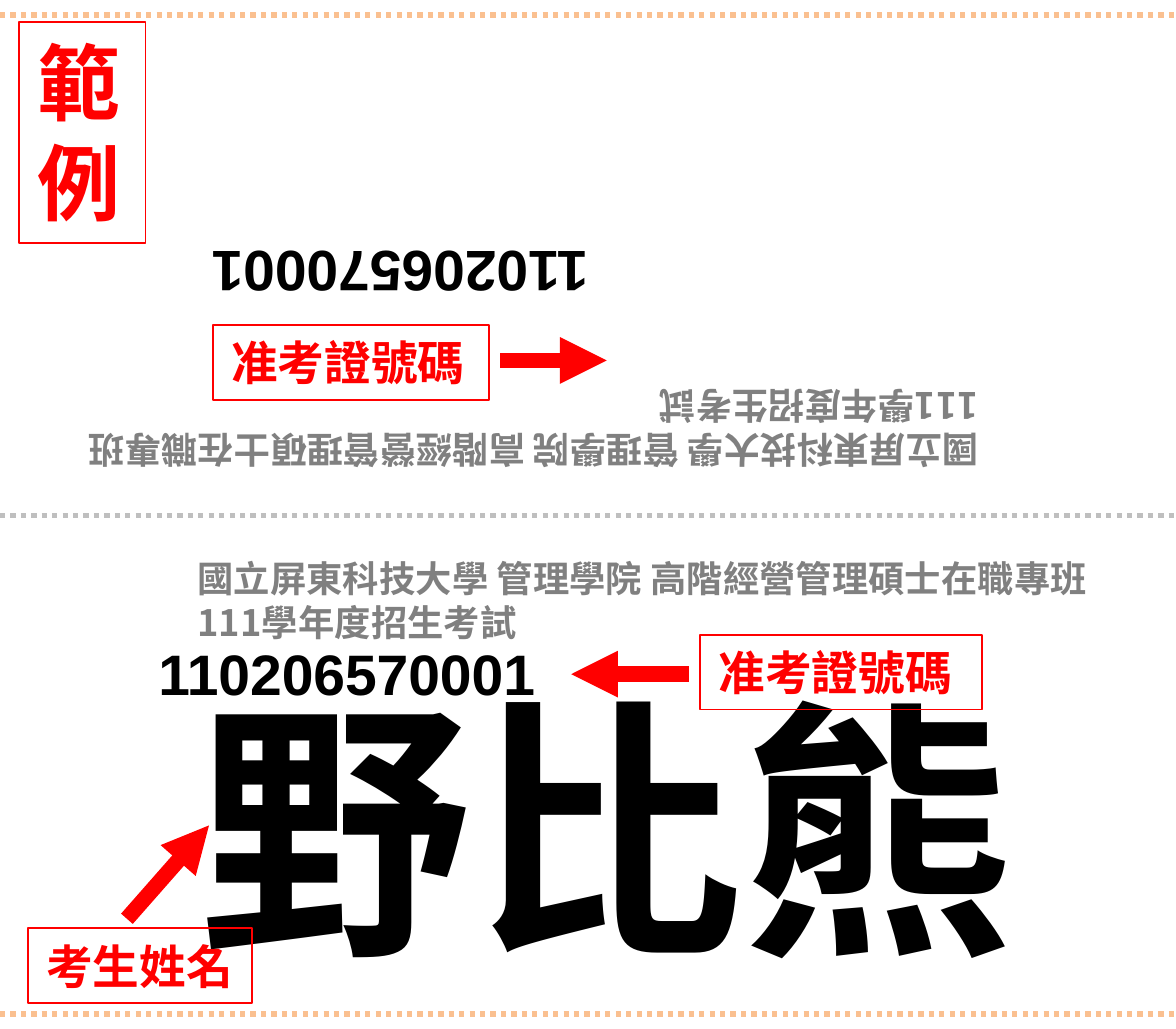
from dataclasses import dataclass

from lxml.etree import SubElement
from pptx import Presentation
from pptx.dml.color import RGBColor
from pptx.enum.dml import MSO_LINE
from pptx.enum.lang import MSO_LANGUAGE_ID as LANGUAGE
from pptx.enum.shapes import MSO_CONNECTOR, MSO_SHAPE
from pptx.enum.text import MSO_ANCHOR, PP_ALIGN
from pptx.oxml.ns import qn
from pptx.util import Inches, Pt


@dataclass(frozen=True)
class Theme:
    red: str = "FF0000"
    black: str = "000000"
    grey: str = "808080"
    fold: str = "BFBFBF"
    cut: str = "FAC090"
    cjk: str = "Noto Sans CJK SC"
    latin: str = "Arial"
    exam_size: int = 14
    label_size: int = 18
    number_size: int = 22
    sample_size: int = 32
    name_size: int = 105


THEME = Theme()
WIDTH, HEIGHT = 6.3, 5.51
EXAM = ["國立屏東科技大學 管理學院 高階經營管理碩士在職專班", "111學年度招生考試"]
NUMBER = "110206570001"
NAME = "野比熊"
NUMBER_LABEL = "准考證號碼"
NAME_LABEL = "考生姓名"
SAMPLE_LABEL = "範例"


def write(shape, lines, size, color, font=THEME.cjk, wrap=True):
    frame = shape.text_frame
    frame.word_wrap = wrap
    frame.vertical_anchor = MSO_ANCHOR.TOP
    frame.margin_left = frame.margin_right = Inches(0.1)
    frame.margin_top = Inches(0.05)
    frame.margin_bottom = 0
    for index, line in enumerate(lines):
        paragraph = frame.add_paragraph() if index else frame.paragraphs[0]
        paragraph.alignment = PP_ALIGN.LEFT
        if font == THEME.cjk:
            paragraph.line_spacing = Pt(1.2 * size)
        run = paragraph.add_run()
        run.text = line
        run.font.size = Pt(size)
        run.font.bold = True
        run.font.name = font
        run.font.language_id = LANGUAGE.TRADITIONAL_CHINESE
        run.font.color.rgb = RGBColor.from_string(color)
        SubElement(run.font._element, qn("a:ea")).set("typeface", font)


def add_text(slide, box, lines, size, color, rotation=0, **style):
    text = slide.shapes.add_textbox(*map(Inches, box))
    text.rotation = rotation
    write(text, lines, size, color, **style)


def add_label(slide, box, text, size=THEME.label_size):
    label = slide.shapes.add_shape(MSO_SHAPE.RECTANGLE, *map(Inches, box))
    label.shadow.inherit = False
    label.fill.background()
    label.line.color.rgb = RGBColor.from_string(THEME.red)
    label.line.width = Pt(0.75)
    write(label, [text], size, THEME.red)


def add_line(slide, start, end, color, width, dotted=False, arrow=False):
    line = slide.shapes.add_connector(
        MSO_CONNECTOR.STRAIGHT, *map(Inches, (*start, *end)))
    line.line.color.rgb = RGBColor.from_string(color)
    line.line.width = Pt(width)
    if dotted:
        line.line.dash_style = MSO_LINE.ROUND_DOT
    if arrow:
        SubElement(line.line._get_or_add_ln(), qn("a:tailEnd")).set("type", "triangle")
    SubElement(line._element.spPr, qn("a:effectLst"))


def add_arrow(slide, start, end):
    add_line(slide, start, end, THEME.red, 6, arrow=True)


def add_guide(slide, y, color):
    add_line(slide, (0, y), (WIDTH, y), color, 2, dotted=True)


def add_exam(slide, left, top, rotation=0):
    add_text(slide, (left, top, 5.25, 0.57), EXAM,
             THEME.exam_size, THEME.grey, rotation)


def add_number(slide, left, top, rotation=0):
    add_text(slide, (left, top, 2.25, 0.47), [NUMBER], THEME.number_size,
             THEME.black, rotation, font=THEME.latin, wrap=False)


def build_back(slide, left, top):
    add_exam(slide, left + 0.09, top + 1.93, rotation=180)
    add_number(slide, left + 1, top + 1.15, rotation=180)
    add_label(slide, (left + 1.14, top + 1.66, 1.48, 0.4), NUMBER_LABEL)
    add_arrow(slide, (left + 2.68, top + 1.85), (left + 3.25, top + 1.85))
    add_label(slide, (left + 0.1, top + 0.04, 0.68, 1.18),
              SAMPLE_LABEL, THEME.sample_size)


def build_front(slide, left, top):
    add_exam(slide, left + 0.96, top + 0.17)
    add_text(slide, (left + 0.97, top + 0.73, 4.62, 1.87), [NAME],
             THEME.name_size, THEME.black, wrap=False)
    add_number(slide, left + 0.75, top + 0.61)
    add_label(slide, (left + 3.75, top + 0.64, 1.51, 0.4), NUMBER_LABEL)
    add_arrow(slide, (left + 3.69, top + 0.85), (left + 3.06, top + 0.85))
    add_label(slide, (left + 0.15, top + 2.21, 1.2, 0.4), NAME_LABEL)
    add_arrow(slide, (left + 0.68, top + 2.16), (left + 1.12, top + 1.66))


def main():
    deck = Presentation()
    deck.slide_width, deck.slide_height = Inches(WIDTH), Inches(HEIGHT)
    slide = deck.slides.add_slide(deck.slide_layouts[6])
    top_cut, fold, bottom_cut = 0.08, 2.76, 5.43
    build_back(slide, 0, top_cut)
    build_front(slide, 0, fold)
    add_guide(slide, fold, THEME.fold)
    for y in (top_cut, bottom_cut):
        add_guide(slide, y, THEME.cut)
    deck.save("out.pptx")


if __name__ == "__main__":
    main()
